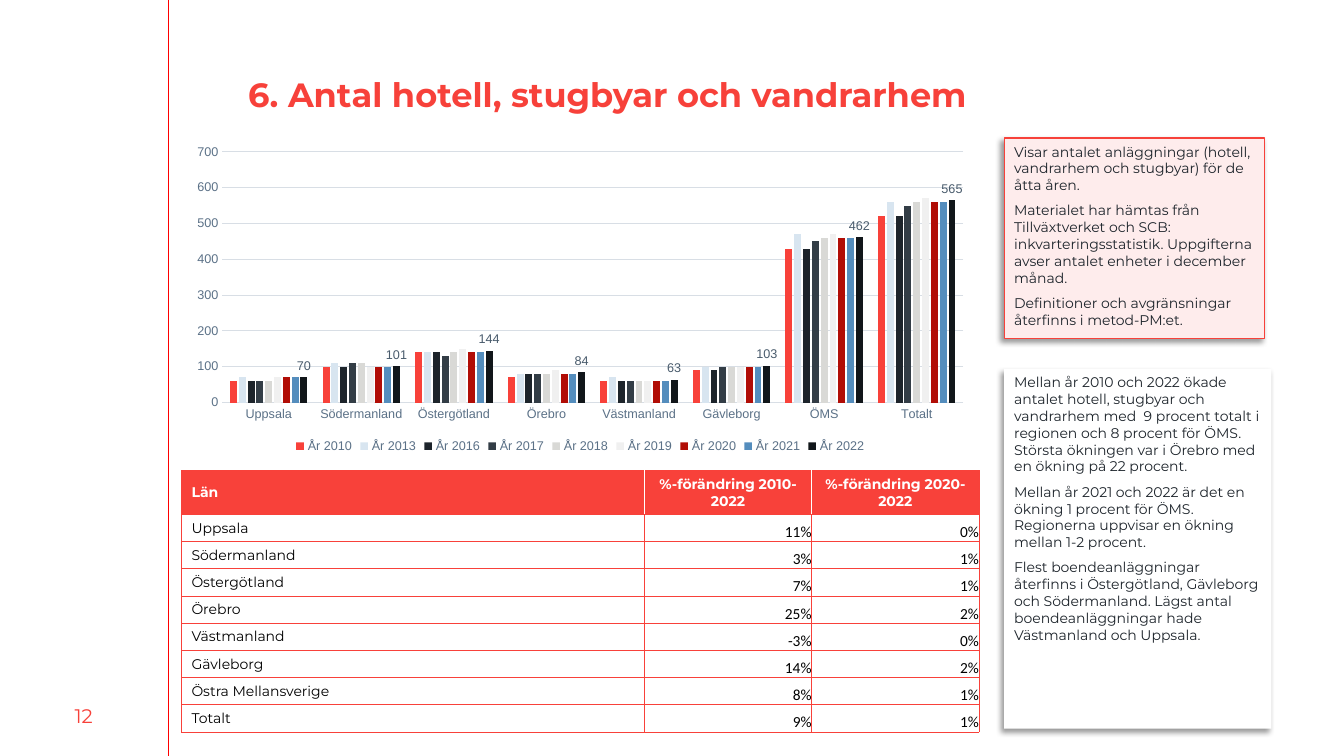
from lxml import etree
from pptx import Presentation
from pptx.chart.data import CategoryChartData
from pptx.dml.color import RGBColor
from pptx.enum.chart import XL_CHART_TYPE, XL_LABEL_POSITION, XL_LEGEND_POSITION, XL_TICK_MARK
from pptx.enum.shapes import MSO_CONNECTOR, MSO_SHAPE
from pptx.enum.text import MSO_ANCHOR, PP_ALIGN
from pptx.oxml import parse_xml
from pptx.oxml.ns import nsdecls, qn
from pptx.util import Inches, Pt

LEFT, CENTER, RIGHT = PP_ALIGN.LEFT, PP_ALIGN.CENTER, PP_ALIGN.RIGHT
TOP, MIDDLE, BOTTOM = MSO_ANCHOR.TOP, MSO_ANCHOR.MIDDLE, MSO_ANCHOR.BOTTOM
NO_TICK = XL_TICK_MARK.NONE

RED = RGBColor(0xF7, 0x41, 0x3A)
TABLE_RED = RGBColor(0xF8, 0x41, 0x3A)
RULE_RED = RGBColor(0xFF, 0x00, 0x00)
PINK = RGBColor(0xFE, 0xEC, 0xEC)
WHITE = RGBColor(0xFF, 0xFF, 0xFF)
BLACK = RGBColor(0x00, 0x00, 0x00)
INK = RGBColor(0x1D, 0x24, 0x2B)
AXIS_TEXT = RGBColor(0x5B, 0x71, 0x87)
LABEL_TEXT = RGBColor(0x49, 0x5B, 0x6C)
GRID = RGBColor(0xD8, 0xDE, 0xE5)

# Content
TITLE = "6. Antal hotell, stugbyar och vandrarhem"
PAGE_NUMBER = "12"
DEFINITIONS = [
    "Visar antalet anläggningar (hotell, vandrarhem och stugbyar) för de åtta åren.",
    "Materialet har hämtas från Tillväxtverket och SCB: inkvarteringsstatistik. "
    "Uppgifterna avser antalet enheter i december månad.",
    "Definitioner och avgränsningar återfinns i metod-PM:et.",
]
FINDINGS = [
    "Mellan år 2010 och 2022 ökade antalet hotell, stugbyar och vandrarhem med  9 procent "
    "totalt i regionen och 8 procent för ÖMS. Största ökningen var i Örebro med en ökning "
    "på 22 procent.",
    "Mellan år 2021 och 2022 är det en ökning 1 procent för ÖMS. Regionerna uppvisar en "
    "ökning mellan 1-2 procent.",
    "Flest boendeanläggningar återfinns i Östergötland, Gävleborg och Södermanland. Lägst "
    "antal boendeanläggningar hade Västmanland och Uppsala.",
]
COUNTIES = ["Uppsala", "Södermanland", "Östergötland", "Örebro", "Västmanland",
            "Gävleborg", "ÖMS", "Totalt"]
YEARS = [
    ("År 2010", "F8413A", (60, 100, 140, 70, 60, 90, 430, 520)),
    ("År 2013", "D8E5F0", (70, 110, 140, 80, 70, 100, 470, 560)),
    ("År 2016", "1D242B", (60, 100, 140, 80, 60, 90, 430, 520)),
    ("År 2017", "333D46", (60, 110, 130, 80, 60, 100, 450, 550)),
    ("År 2018", "D9D9D6", (60, 110, 140, 80, 60, 100, 460, 560)),
    ("År 2019", "F0F0F0", (70, 100, 150, 90, 60, 100, 470, 570)),
    ("År 2020", "B10D06", (70, 100, 140, 80, 60, 100, 460, 560)),
    ("År 2021", "548DBD", (70, 100, 140, 80, 60, 100, 460, 560)),
    ("År 2022", "11161A", (70, 101, 144, 84, 63, 103, 462, 565)),
]
CHANGES = [
    ("Län", "%-förändring 2010-2022", "%-förändring 2020-2022"),
    ("Uppsala", "11%", "0%"),
    ("Södermanland", "3%", "1%"),
    ("Östergötland", "7%", "1%"),
    ("Örebro", "25%", "2%"),
    ("Västmanland", "-3%", "0%"),
    ("Gävleborg", "14%", "2%"),
    ("Östra Mellansverige", "8%", "1%"),
    ("Totalt", "9%", "1%"),
]
COLUMN_WIDTHS = (4.59, 1.66, 1.66)
HEADER_HEIGHT, ROW_HEIGHT = 0.41, 0.27


def box(left, top, width, height):
    return Inches(left), Inches(top), Inches(width), Inches(height)


def format_font(font, size, color, name="Montserrat", bold=False):
    font.size, font.name, font.bold = Pt(size), name, bold
    font.color.rgb = color


def write(frame, text, size=10, color=INK, name="Montserrat", bold=False,
          align=LEFT, anchor=TOP, gap=0):
    """Fill a text frame with one string or a list of paragraphs."""
    frame.word_wrap = True
    frame.vertical_anchor = anchor
    lines = [text] if isinstance(text, str) else text
    for index, line in enumerate(lines):
        paragraph = frame.add_paragraph() if index else frame.paragraphs[0]
        paragraph.alignment = align
        paragraph.space_before = Pt(gap if index else 0)
        paragraph.space_after = Pt(gap)
        run = paragraph.add_run()
        run.text = line
        format_font(run.font, size, color, name, bold)


def add_panel(slide, position, paragraphs, fill, line=None):
    panel = slide.shapes.add_shape(MSO_SHAPE.RECTANGLE, *box(*position))
    panel.fill.solid()
    panel.fill.fore_color.rgb = fill
    if line is None:
        panel.line.fill.background()
    else:
        panel.line.color.rgb = line
        panel.line.width = Pt(1)
    panel._element.spPr.append(parse_xml(
        f'<a:effectLst {nsdecls("a")}><a:outerShdw blurRad="{Pt(4)}" dist="{Pt(3)}" '
        f'dir="{135 * 60000}" algn="tr" rotWithShape="0"><a:srgbClr val="000000">'
        '<a:alpha val="40000"/></a:srgbClr></a:outerShdw></a:effectLst>'))
    write(panel.text_frame, paragraphs, gap=3)


def set_borders(cell, left=TABLE_RED, right=TABLE_RED):
    properties = cell._tc.get_or_add_tcPr()
    sides = (("lnL", left), ("lnR", right), ("lnT", TABLE_RED), ("lnB", TABLE_RED))
    for index, (side, color) in enumerate(sides):
        properties.insert(index, parse_xml(
            f'<a:{side} {nsdecls("a")} w="{Pt(0.75)}"><a:solidFill>'
            f'<a:srgbClr val="{color}"/></a:solidFill></a:{side}>'))


def add_change_table(slide):
    height = HEADER_HEIGHT + ROW_HEIGHT * (len(CHANGES) - 1)
    table = slide.shapes.add_table(len(CHANGES), len(COLUMN_WIDTHS),
                                   *box(1.8, 4.67, sum(COLUMN_WIDTHS), height)).table
    table.horz_banding = False
    for column, width in zip(table.columns, COLUMN_WIDTHS):
        column.width = Inches(width)
    last = len(COLUMN_WIDTHS) - 1
    for r, values in enumerate(CHANGES):
        table.rows[r].height = Inches(ROW_HEIGHT if r else HEADER_HEIGHT)
        for c, value in enumerate(values):
            cell = table.cell(r, c)
            if r == 0:
                style = dict(color=WHITE, bold=True, align=CENTER if c else LEFT)
                cell.fill.solid()
                cell.fill.fore_color.rgb = TABLE_RED
                set_borders(cell, left=WHITE if c else TABLE_RED,
                            right=WHITE if c < last else TABLE_RED)
            else:
                style = dict(color=BLACK)
                cell.fill.background()
                set_borders(cell)
            cell.vertical_anchor = MIDDLE
            if r and c:
                style.update(size=11, name="Calibri", align=RIGHT)
                cell.vertical_anchor = BOTTOM
                cell.margin_left = cell.margin_right = 0
                cell.margin_top = cell.margin_bottom = 0
            write(cell.text_frame, value, anchor=cell.vertical_anchor, **style)


def add_facility_chart(slide):
    data = CategoryChartData(number_format="#,##0")
    data.categories = COUNTIES
    for name, _, values in YEARS:
        data.add_series(name, values)
    chart = slide.shapes.add_chart(XL_CHART_TYPE.COLUMN_CLUSTERED,
                                   *box(1.8, 1.37, 7.91, 3.17), data).chart
    format_font(chart.font, 10, INK, "Arial")
    chart.has_title = False
    chart.has_legend = True
    chart.legend.position = XL_LEGEND_POSITION.BOTTOM
    chart.legend.include_in_layout = False
    format_font(chart.legend.font, 9, AXIS_TEXT, "Arial")

    category_axis, value_axis = chart.category_axis, chart.value_axis
    for axis in (category_axis, value_axis):
        axis.major_tick_mark = axis.minor_tick_mark = NO_TICK
        format_font(axis.tick_labels.font, 9, AXIS_TEXT, "Arial")
    value_axis.minimum_scale, value_axis.maximum_scale, value_axis.major_unit = 0, 700, 100
    value_axis.tick_labels.number_format = "#,##0"
    value_axis.tick_labels.number_format_is_linked = False
    value_axis.format.line.fill.background()
    for line in (category_axis.format.line, value_axis.major_gridlines.format.line):
        line.color.rgb = GRID
        line.width = Pt(0.75)

    plot = chart.plots[0]
    plot.vary_by_categories = False
    plot.gap_width, plot.overlap = 219, -27
    for series, (_, color, _) in zip(plot.series, YEARS):
        series.format.fill.solid()
        series.format.fill.fore_color.rgb = RGBColor.from_string(color)
    labels = plot.series[len(YEARS) - 1].data_labels
    labels.show_value = True
    labels.position = XL_LABEL_POSITION.OUTSIDE_END
    labels.number_format, labels.number_format_is_linked = "#,##0", False
    format_font(labels.font, 9, LABEL_TEXT, "Arial")


def main():
    presentation = Presentation()
    presentation.slide_width, presentation.slide_height = Inches(13.33), Inches(7.5)
    slide = presentation.slides.add_slide(presentation.slide_layouts[5])

    # Title, page number and margin rule
    title = slide.shapes.title
    title.left, title.top, title.width, title.height = box(2.41, 0.68, 10.12, 0.89)
    frame = title.text_frame
    frame.margin_left = frame.margin_right = Inches(0.05)
    frame.margin_top = frame.margin_bottom = Inches(0.05)
    write(frame, TITLE, size=24, color=RED, bold=True)
    number = slide.shapes.add_textbox(*box(0, 6.9, 1.66, 0.4))
    write(number.text_frame, PAGE_NUMBER, size=14, color=RED, align=CENTER, anchor=MIDDLE)
    rule = slide.shapes.add_connector(MSO_CONNECTOR.STRAIGHT, Inches(1.67), 0,
                                      Inches(1.67), Inches(7.5))
    rule.line.color.rgb = RULE_RED
    rule.line.width = Pt(0.75)
    etree.SubElement(rule._element.spPr, qn("a:effectLst"))

    # Side panels, table and chart
    add_panel(slide, (9.96, 1.37, 2.58, 1.99), DEFINITIONS, PINK, line=RED)
    add_change_table(slide)
    add_panel(slide, (9.96, 3.66, 2.65, 3.57), FINDINGS, WHITE)
    add_facility_chart(slide)
    presentation.save("out.pptx")


if __name__ == "__main__":
    main()
